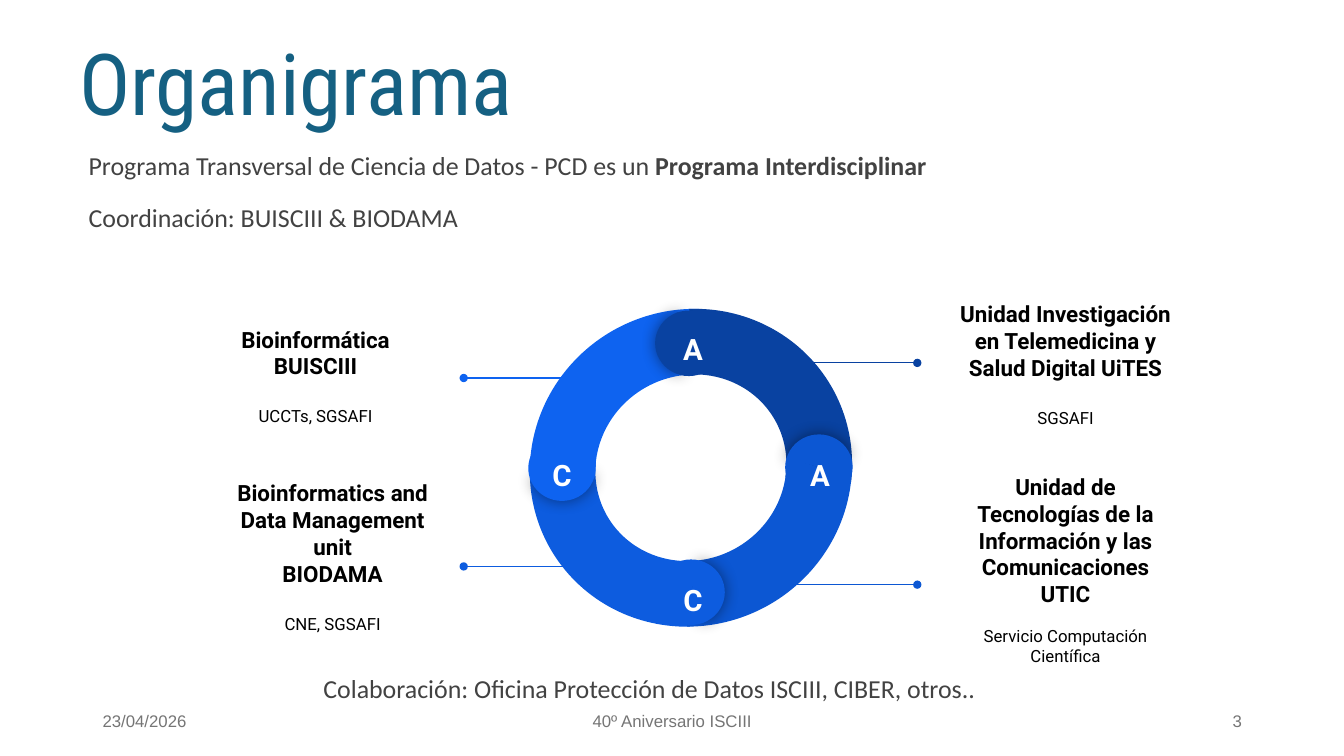
from lxml.etree import SubElement
from pptx import Presentation
from pptx.dml.color import RGBColor
from pptx.enum.shapes import MSO_CONNECTOR, MSO_SHAPE
from pptx.enum.text import MSO_ANCHOR, MSO_AUTO_SIZE, PP_ALIGN
from pptx.oxml.ns import qn
from pptx.util import Pt

WIDTH, HEIGHT = 960, 540
TEAL, GREY, FOOTER_GREY, BLACK, WHITE = "156082", "424242", "757575", "000000", "FFFFFF"
NAVY, ROYAL, BLUE, BRIGHT = "0942A1", "0C57D3", "0D5CDF", "0E63F0"

TITLE = "Organigrama"
INTRO = [
    ("Programa Transversal de Ciencia de Datos - PCD es un ", 18.5, False, 0),
    ("Coordinación: BUISCIII & BIODAMA", 18.5, False, 16),
]
INTRO_BOLD = "Programa Interdisciplinar"
COLLABORATION = "Colaboración: Oficina Protección de Datos ISCIII, CIBER, otros.."
FOOTERS = [
    ("23/04/2026", 66.2, 216, PP_ALIGN.LEFT),
    ("40º Aniversario ISCIII", 318.2, 324, PP_ALIGN.CENTER),
    ("3", 678.2, 216, PP_ALIGN.RIGHT),
]

RING_CENTER = (493.5, 334.1)
RING_LONG, RING_SHORT = 231.8, 225.4
RING_THICKNESS = 0.208
ARCS = [
    (240, BLUE, 126.23, 181.77),
    (330, BRIGHT, 126.23, 181.77),
    (60, NAVY, 125.64, 183.46),
    (150, ROYAL, 126.23, 180.81),
]
CAP_LONG, CAP_SHORT = 48.2, 46.8
CAPS = [
    ("A", ROYAL, 90, (585, 333.7), (564.5, 316.8)),
    ("C", BLUE, 180, (493.6, 423), (473.8, 406.1)),
    ("C", BRIGHT, 270, (401.4, 334.4), (380.2, 316.8)),
    ("A", NAVY, 0, (492.1, 245.2), (473.8, 226.8)),
]
LETTER_SIZE = (42.5, 21.6)

UNIT_SIZE = (178.6, 105.1)
UNITS = [
    ((136.1, 216), 9.4, [
        ("Bioinformática", 16, True, 0),
        ("BUISCIII", 16, True, 0),
        ("UCCTs, SGSAFI", 12, False, 19),
    ], (419, 331.2, 270, BRIGHT)),
    ((148.3, 351.4), 22.4, [
        ("Bioinformatics and Data Management unit", 16, True, 0),
        ("BIODAMA", 16, True, 0),
        ("CNE, SGSAFI", 12, False, 19),
    ], (441.4, 331.2, 404.6, BLUE)),
    ((671.8, 207.4), 9.4, [
        ("Unidad Investigación en Telemedicina y Salud Digital UiTES", 16, True, 0),
        ("SGSAFI", 12, False, 19),
    ], (547.2, 655.2, 259.2, NAVY)),
    ((671.8, 354.2), 9.4, [
        ("Unidad de Tecnologías de la Información y las Comunicaciones", 16, True, 0),
        ("UTIC", 16, True, 0),
        ("Servicio Computación Científica", 12, False, 13),
    ], (547.2, 655.2, 417.6, ROYAL)),
]

presentation = Presentation()
presentation.slide_width, presentation.slide_height = Pt(WIDTH), Pt(HEIGHT)
slide = presentation.slides.add_slide(presentation.slide_layouts[6])


def color(value):
    return RGBColor.from_string(value)


def style_run(run, size, bold, font, fill):
    run.font.size, run.font.bold, run.font.name = Pt(size), bold, font
    run.font.color.rgb = color(fill)


def add_text(box, lines, font, fill, align, anchor=MSO_ANCHOR.TOP,
             insets=(7.2, 3.6, 7.2, 3.6), line_spacing=None):
    shape = slide.shapes.add_textbox(*map(Pt, box))
    text_frame = shape.text_frame
    text_frame.word_wrap = True
    text_frame.vertical_anchor = anchor
    (text_frame.margin_left, text_frame.margin_top,
     text_frame.margin_right, text_frame.margin_bottom) = map(Pt, insets)
    text_frame.text = "\n".join(line[0] for line in lines)
    for paragraph, (_, size, bold, space_before) in zip(text_frame.paragraphs, lines):
        paragraph.alignment = align
        if line_spacing:
            paragraph.line_spacing = line_spacing
        if space_before:
            paragraph.space_before = Pt(space_before)
        for run in paragraph.runs:
            style_run(run, size, bold, font, fill)
    return text_frame


def add_turned(kind, center, long, short, rotation, fill, adjustments):
    width, height = (short, long) if rotation in (60, 240, 90.7, 90, 270, 270.7) else (long, short)
    left, top = center[0] - width / 2, center[1] - height / 2
    shape = slide.shapes.add_shape(kind, Pt(left), Pt(top), Pt(width), Pt(height))
    shape.shadow.inherit = False
    shape.rotation = rotation
    shape.fill.solid()
    shape.fill.fore_color.rgb = color(fill)
    shape.line.fill.background()
    for index, value in enumerate(adjustments):
        shape.adjustments[index] = value
    return shape


def add_glow(shape):
    effects = shape._element.spPr.find(qn("a:effectLst"))
    shadow = SubElement(effects, qn("a:outerShdw"), blurRad=str(Pt(11.2)), dist="0",
                        dir="0", algn="ctr", rotWithShape="0")
    tint = SubElement(shadow, qn("a:srgbClr"), val=BLACK)
    SubElement(tint, qn("a:alpha"), val="43000")


def add_pointer(start, end, y, fill):
    connector = slide.shapes.add_connector(MSO_CONNECTOR.STRAIGHT, Pt(start), Pt(y), Pt(end), Pt(y))
    connector.line.color.rgb = color(fill)
    connector.line.width = Pt(0.75)
    SubElement(connector.line._get_or_add_ln(), qn("a:tailEnd"), type="oval")
    SubElement(connector._element.spPr, qn("a:effectLst"))


add_text((49.7, 10.8, 828, 104.4), [(TITLE, 61, False, 0)], "Roboto Condensed", TEAL,
         PP_ALIGN.LEFT, MSO_ANCHOR.MIDDLE, line_spacing=0.9)
intro = add_text((56.2, 105.1, 632.2, 61.2), INTRO, "Calibri", GREY,
                 PP_ALIGN.JUSTIFY, line_spacing=0.95)
emphasis = intro.paragraphs[0].add_run()
emphasis.text = INTRO_BOLD
style_run(emphasis, 18.5, True, "Calibri", GREY)

for rotation, fill, begin, end in ARCS:
    add_turned(MSO_SHAPE.BLOCK_ARC, RING_CENTER, RING_LONG, RING_SHORT, rotation, fill,
               (begin, end, RING_THICKNESS))

for letter, fill, rotation, center, corner in CAPS:
    add_glow(add_turned(MSO_SHAPE.PIE, center, CAP_LONG, CAP_SHORT, rotation + 0.7, fill,
                        (61.9, 149.96)))
    add_turned(MSO_SHAPE.PIE, center, CAP_LONG, CAP_SHORT, (rotation + 180) % 360, fill,
               (40.28, 171.84))
    add_text((*corner, *LETTER_SIZE), [(letter, 21, True, 0)], "Roboto", WHITE,
             PP_ALIGN.CENTER, insets=(9.4,) * 4)

for corner, bottom_inset, lines, pointer in UNITS:
    add_text((*corner, *UNIT_SIZE), lines, "Roboto", BLACK, PP_ALIGN.CENTER,
             MSO_ANCHOR.MIDDLE, (9.4, 9.4, 9.4, bottom_inset))
    add_pointer(*pointer)

collaboration = add_text((223.9, 475.2, 589.7, 36), [(COLLABORATION, 18.5, False, 0)], "Calibri",
                         GREY, PP_ALIGN.JUSTIFY, insets=(7.2,) * 4, line_spacing=0.95)
collaboration.auto_size = MSO_AUTO_SIZE.SHAPE_TO_FIT_TEXT

for text, left, width, align in FOOTERS:
    add_text((left, 500.4, width, 28.8), [(text, 12, False, 0)], "Arial", FOOTER_GREY,
             align, MSO_ANCHOR.MIDDLE)

presentation.save("out.pptx")
